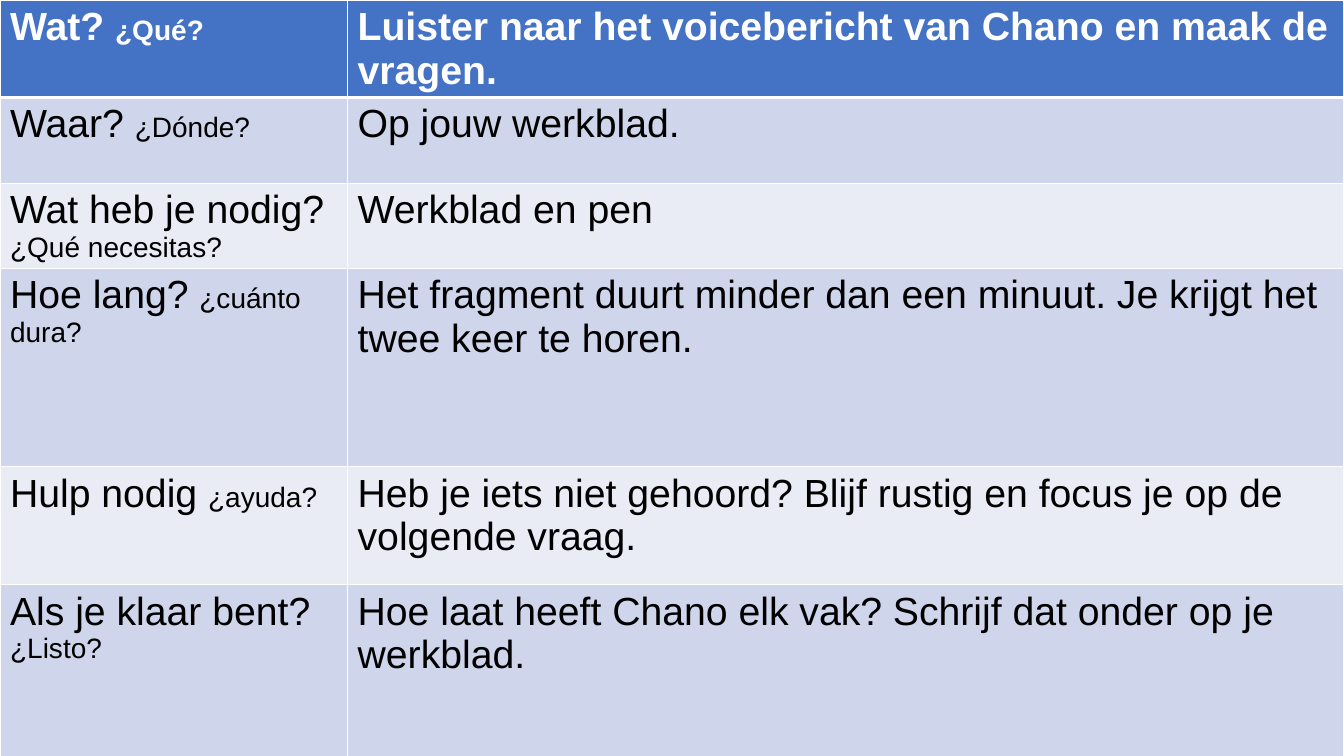
import lxml.etree
import pptx
import pptx.dml.color
import pptx.oxml.ns
import pptx.util

Cm = pptx.util.Cm
Pt = pptx.util.Pt

FONT = "Arial"
WHITE, BLACK = "FFFFFF", "000000"
HEADER_FILL = "4472C4"
BAND_FILLS = ["CFD5EA", "E9EBF5"]
COLUMN_WIDTHS = [8.76, 25.1]
ROW_HEIGHTS = [2.41, 2.16, 1.78, 5, 2.97, 4.57]
TASK_ROWS = [
    ("Wat? ", "¿Qué?", "Luister naar het voicebericht van Chano en maak de vragen."),
    ("Waar? ", "¿Dónde?", "Op jouw werkblad."),
    ("Wat heb je nodig? ", "¿Qué necesitas?", "Werkblad en pen"),
    ("Hoe lang? ", "¿cuánto dura?",
     "Het fragment duurt minder dan een minuut. Je krijgt het twee keer te horen."),
    ("Hulp nodig ", "¿ayuda?",
     "Heb je iets niet gehoord? Blijf rustig en focus je op de volgende vraag."),
    ("Als je klaar bent? ", "¿Listo?",
     "Hoe laat heeft Chano elk vak? Schrijf dat onder op je werkblad."),
]


def color(hex_string):
    return pptx.dml.color.RGBColor.from_string(hex_string)


def set_borders(cell, top_width, bottom_width):
    qn = pptx.oxml.ns.qn
    properties = cell._tc.get_or_add_tcPr()
    widths = {"a:lnL": 1, "a:lnR": 1, "a:lnT": top_width, "a:lnB": bottom_width}
    for tag, width in widths.items():
        line = lxml.etree.SubElement(properties, qn(tag), w=str(Pt(width)))
        fill = lxml.etree.SubElement(line, qn("a:solidFill"))
        lxml.etree.SubElement(fill, qn("a:srgbClr"), val=WHITE)


def write_cell(cell, parts, is_header):
    paragraph = cell.text_frame.paragraphs[0]
    for text, size in parts:
        run = paragraph.add_run()
        run.text = text
        run.font.name = FONT
        run.font.size = Pt(size)
        run.font.bold = is_header
        run.font.color.rgb = color(WHITE if is_header else BLACK)


def add_task_table(slide, left, top, width, height):
    frame = slide.shapes.add_table(
        len(ROW_HEIGHTS), len(COLUMN_WIDTHS), left, top, width, height)
    table = frame.table
    for column, column_width in zip(table.columns, COLUMN_WIDTHS):
        column.width = Cm(column_width)
    for index, (question, spanish, answer) in enumerate(TASK_ROWS):
        row = table.rows[index]
        row.height = Cm(ROW_HEIGHTS[index])
        is_header = index == 0
        fill = HEADER_FILL if is_header else BAND_FILLS[(index - 1) % 2]
        contents = [[(question, 28), (spanish, 20)], [(answer, 28)]]
        for cell, parts in zip(row.cells, contents):
            set_borders(cell, 3 if index == 1 else 1, 3 if is_header else 1)
            cell.fill.solid()
            cell.fill.fore_color.rgb = color(fill)
            write_cell(cell, parts, is_header)
    frame.height = height


def main():
    presentation = pptx.Presentation()
    presentation.slide_width = Cm(33.87)
    presentation.slide_height = Cm(19.05)
    slide = presentation.slides.add_slide(presentation.slide_layouts[6])
    add_task_table(slide, Cm(0), Cm(0), presentation.slide_width, Cm(19.63))
    presentation.save("out.pptx")


if __name__ == "__main__":
    main()
